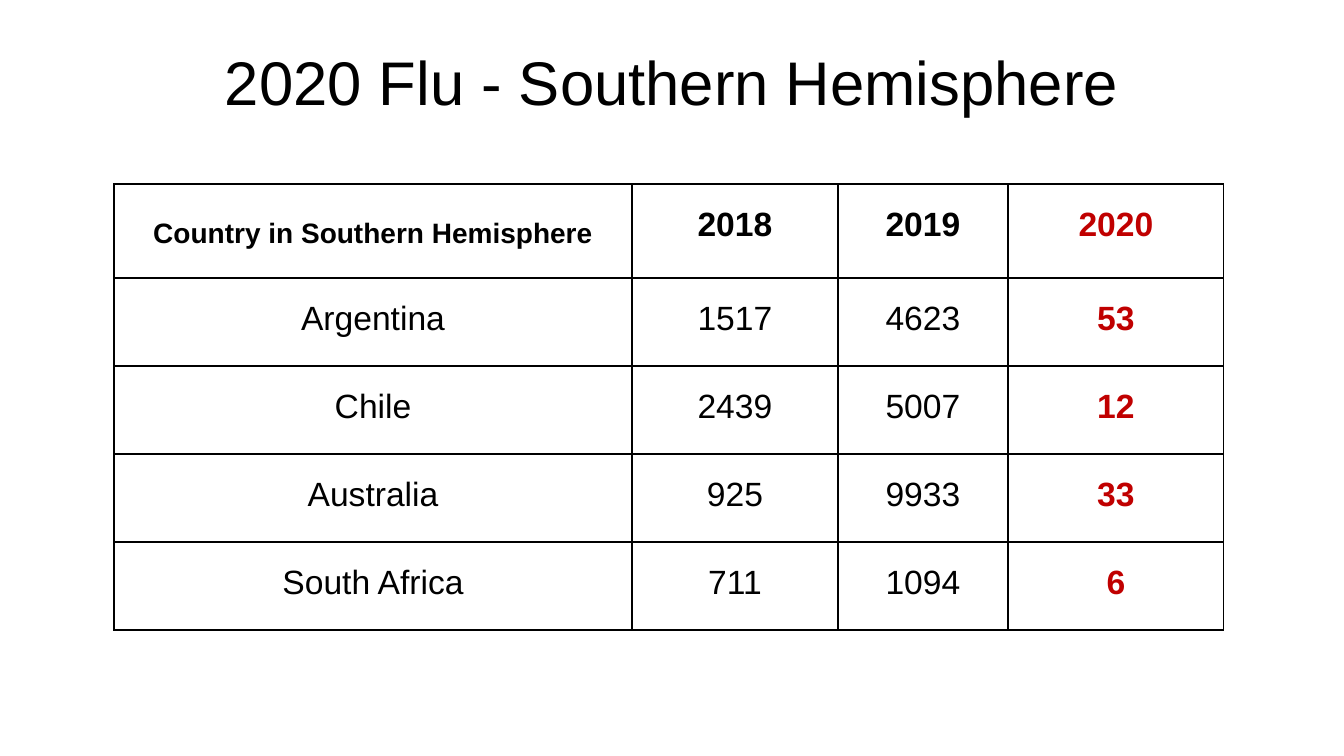
from pptx import Presentation
from pptx.dml.color import RGBColor
from pptx.enum.text import MSO_ANCHOR as ANCHOR, PP_ALIGN as ALIGN
from pptx.oxml import parse_xml
from pptx.oxml.ns import nsdecls
from pptx.util import Emu, Pt

PX = 914400 / 100.8
COLORS = {"text": "000000", "accent": "C00000", "line": "000000"}
FONT = "Arial"

HEADER = ["Country in Southern Hemisphere", "2018", "2019", "2020"]
CASES = [
    ["Argentina", "1517", "4623", "53"],
    ["Chile", "2439", "5007", "12"],
    ["Australia", "925", "9933", "33"],
    ["South Africa", "711", "1094", "6"],
]
COL_WIDTHS = [518, 206, 170, 216]
ROW_HEIGHTS = [94] + [88] * len(CASES)


def px(n):
    return Emu(round(n * PX))


def set_text(tf, text, size=24, color="text", bold=False, spacing=None):
    tf.word_wrap = True
    p = tf.paragraphs[0]
    p.alignment = ALIGN.CENTER
    p.line_spacing = spacing
    r = p.add_run()
    r.text = text
    r.font.name = FONT
    r.font.size = Pt(size)
    r.font.bold = bold
    r.font.color.rgb = RGBColor.from_string(COLORS[color])


def add_title(slide, text):
    sp = slide.shapes.add_textbox(0, px(44), px(1344), px(84))
    sp.text_frame.vertical_anchor = ANCHOR.MIDDLE
    set_text(sp.text_frame, text, size=44, spacing=0.9)


def set_borders(cell):
    """Draw a 1 pt line on all four sides; call before setting the fill."""
    tc_pr = cell._tc.get_or_add_tcPr()
    for side in ("lnL", "lnR", "lnT", "lnB"):
        tc_pr.append(parse_xml(
            f'<a:{side} {nsdecls("a")} w="{Pt(1)}"><a:solidFill>'
            f'<a:srgbClr val="{COLORS["line"]}"/></a:solidFill></a:{side}>'))


def format_cell(cell, margin_top):
    cell.margin_left = cell.margin_right = px(7)
    cell.margin_top, cell.margin_bottom = px(margin_top), 0
    cell.vertical_anchor = ANCHOR.TOP
    set_borders(cell)
    cell.fill.background()


def add_case_table(slide, left, top):
    rows = [HEADER] + CASES
    table = slide.shapes.add_table(
        len(rows), len(HEADER), px(left), px(top),
        px(sum(COL_WIDTHS)), px(sum(ROW_HEIGHTS))).table
    table.first_row = table.horz_banding = False
    for column, width in zip(table.columns, COL_WIDTHS):
        column.width = px(width)
    for row, height in zip(table.rows, ROW_HEIGHTS):
        row.height = px(height)
    for i, values in enumerate(rows):
        for j, value in enumerate(values):
            cell = table.cell(i, j)
            is_corner = i == j == 0
            is_latest = j == len(HEADER) - 1
            format_cell(cell, margin_top=34 if is_corner else 22)
            set_text(cell.text_frame, value, size=20 if is_corner else 24,
                     color="accent" if is_latest else "text",
                     bold=i == 0 or is_latest)


def main():
    prs = Presentation()
    prs.slide_width, prs.slide_height = px(1344), px(756)
    slide = prs.slides.add_slide(prs.slide_layouts[6])
    add_title(slide, "2020 Flu - Southern Hemisphere")
    add_case_table(slide, left=114, top=184)
    prs.save("out.pptx")


if __name__ == "__main__":
    main()
